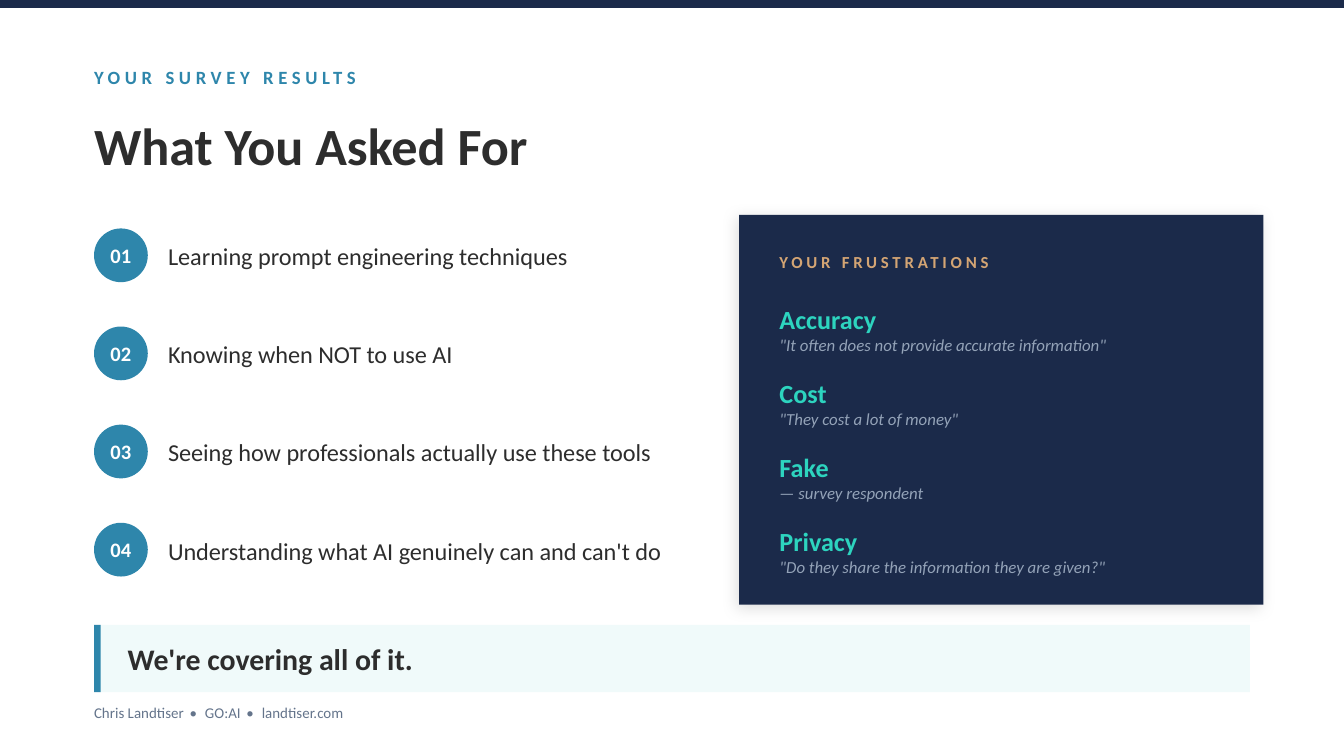
"""Build the survey results slide."""
from dataclasses import dataclass

from lxml.etree import SubElement
from pptx import Presentation
from pptx.dml.color import RGBColor
from pptx.enum.shapes import MSO_SHAPE
from pptx.enum.text import MSO_ANCHOR, MSO_AUTO_SIZE, PP_ALIGN
from pptx.oxml.ns import qn
from pptx.shapes.autoshape import Shape
from pptx.slide import Slide
from pptx.util import Pt


@dataclass(frozen=True)
class Style:
    size: float
    color: str
    bold: bool = False
    slant: bool = False
    track: float = 0


@dataclass(frozen=True)
class Theme:
    font: str = "Calibri"
    navy: str = "1B2A4A"
    blue: str = "2E86AB"
    pale: str = "F0FAFA"
    shade: str = "000000"
    label: Style = Style(10, "2E86AB", bold=True, track=2.5)
    title: Style = Style(28, "2D2D2D", bold=True)
    badge: Style = Style(11, "FFFFFF", bold=True)
    item: Style = Style(13, "2D2D2D")
    head: Style = Style(9, "D4A574", bold=True, track=2)
    topic: Style = Style(14, "2DD4BF", bold=True)
    quote: Style = Style(9, "94A3B8", slant=True)
    claim: Style = Style(16, "2D2D2D", bold=True)
    foot: Style = Style(8, "64748B")
    dot: Style = Style(8, "64748B", track=1.2)


@dataclass(frozen=True)
class Box:
    left: float
    top: float
    width: float
    height: float


@dataclass(frozen=True)
class Run:
    text: str
    style: Style


@dataclass(frozen=True)
class Gripe:
    topic: str
    quote: str


THEME = Theme()
LEFT = 50.4
GOALS = (
    "Learning prompt engineering techniques",
    "Knowing when NOT to use AI",
    "Seeing how professionals actually use these tools",
    "Understanding what AI genuinely can and can't do",
)
GRIPES = (
    Gripe("Accuracy", '"It often does not provide accurate information"'),
    Gripe("Cost", '"They cost a lot of money"'),
    Gripe("Fake", "— survey respondent"),
    Gripe("Privacy", '"Do they share the information they are given?"'),
)
CREDITS = ("Chris Landtiser", "GO:AI", "landtiser.com")


def place(shape: Shape, box: Box) -> None:
    """Move and size a shape."""
    shape.left, shape.top = Pt(box.left), Pt(box.top)
    shape.width, shape.height = Pt(box.width), Pt(box.height)


def write(shape: Shape, *lines: list[Run], align: PP_ALIGN = PP_ALIGN.LEFT) -> None:
    """Fill a shape with styled lines of runs."""
    frame = shape.text_frame
    frame.auto_size = MSO_AUTO_SIZE.NONE
    frame.word_wrap = True
    frame.vertical_anchor = MSO_ANCHOR.MIDDLE
    frame.margin_left = frame.margin_right = Pt(0)
    frame.margin_top = frame.margin_bottom = Pt(0)
    for index, line in enumerate(lines):
        para = frame.add_paragraph() if index else frame.paragraphs[0]
        para.alignment = align
        para.line_spacing = 1.0
        para.space_before = Pt(0)
        for part in line:
            run = para.add_run()
            run.text = part.text
            font, style = run.font, part.style
            font.name, font.size = THEME.font, Pt(style.size)
            font.bold, font.italic = style.bold, style.slant
            font.color.rgb = RGBColor.from_string(style.color)
            if style.track:
                run._r.get_or_add_rPr().set("spc", str(round(style.track * 100)))


def add_text(slide: Slide, box: Box, *lines: list[Run]) -> None:
    """Add a text box."""
    shape = slide.shapes.add_textbox(0, 0, 0, 0)
    place(shape, box)
    write(shape, *lines)


def add_block(slide: Slide, box: Box, fill: str,
              kind: MSO_SHAPE = MSO_SHAPE.RECTANGLE) -> Shape:
    """Add a flat filled shape with no line."""
    shape = slide.shapes.add_shape(kind, 0, 0, 0, 0)
    place(shape, box)
    shape.shadow.inherit = False
    shape.fill.solid()
    shape.fill.fore_color.rgb = RGBColor.from_string(fill)
    shape.line.fill.background()
    return shape


def add_shadow(shape: Shape) -> None:
    """Give a shape a soft outer shadow."""
    effects = shape._element.spPr.find(qn("a:effectLst"))
    outer = SubElement(effects, qn("a:outerShdw"), blurRad=str(Pt(8)),
                       dist=str(Pt(2)), dir="8100000", algn="bl", rotWithShape="0")
    color = SubElement(outer, qn("a:srgbClr"), val=THEME.shade)
    SubElement(color, qn("a:alpha"), val="12000")


def add_goals(slide: Slide) -> None:
    """Add the numbered list of goals."""
    for index, goal in enumerate(GOALS):
        top = 122.4 + index * 52.56
        badge = add_block(slide, Box(LEFT, top, 28.8, 28.8), THEME.blue, MSO_SHAPE.OVAL)
        write(badge, [Run(f"{index + 1:02d}", THEME.badge)], align=PP_ALIGN.CENTER)
        add_text(slide, Box(90, top - 1.44, 284.4, 32.4), [Run(goal, THEME.item)])


def add_gripes(slide: Slide) -> None:
    """Add the dark panel of gripes."""
    add_shadow(add_block(slide, Box(396, 115.2, 280.8, 208.8), THEME.navy))
    left, width = 417.6, 237.6
    add_text(slide, Box(left, 129.6, width, 21.6), [Run("YOUR FRUSTRATIONS", THEME.head)])
    for index, gripe in enumerate(GRIPES):
        add_text(slide, Box(left, 158.4 + index * 39.6, width, 36),
                 [Run(gripe.topic, THEME.topic)], [Run(gripe.quote, THEME.quote)])


def add_close(slide: Slide) -> None:
    """Add the closing claim and the footer."""
    top, height = 334.8, 36
    add_block(slide, Box(LEFT, top, 619.2, height), THEME.pale)
    add_block(slide, Box(LEFT, top, 3.6, height), THEME.blue)
    add_text(slide, Box(68.4, top, 583.2, height),
             [Run("We're covering all of it.", THEME.claim)])
    parts = [Run(CREDITS[0], THEME.foot)]
    for credit in CREDITS[1:]:
        parts += [Run(" • ", THEME.dot), Run(credit, THEME.foot)]
    add_text(slide, Box(LEFT, top + height, 360, 21.6), parts)


def main() -> None:
    """Build and save the deck."""
    deck = Presentation()
    deck.slide_width, deck.slide_height = Pt(720), Pt(405)
    slide = deck.slides.add_slide(deck.slide_layouts[5])
    add_block(slide, Box(0, 0, 720, 4.32), THEME.navy)
    add_text(slide, Box(LEFT, 28.8, 576, 25.2), [Run("YOUR SURVEY RESULTS", THEME.label)])
    title = slide.shapes.title
    place(title, Box(LEFT, 57.6, 576, 39.6))
    write(title, [Run("What You Asked For", THEME.title)])
    add_goals(slide)
    add_gripes(slide)
    add_close(slide)
    deck.save("out.pptx")


if __name__ == "__main__":
    main()
